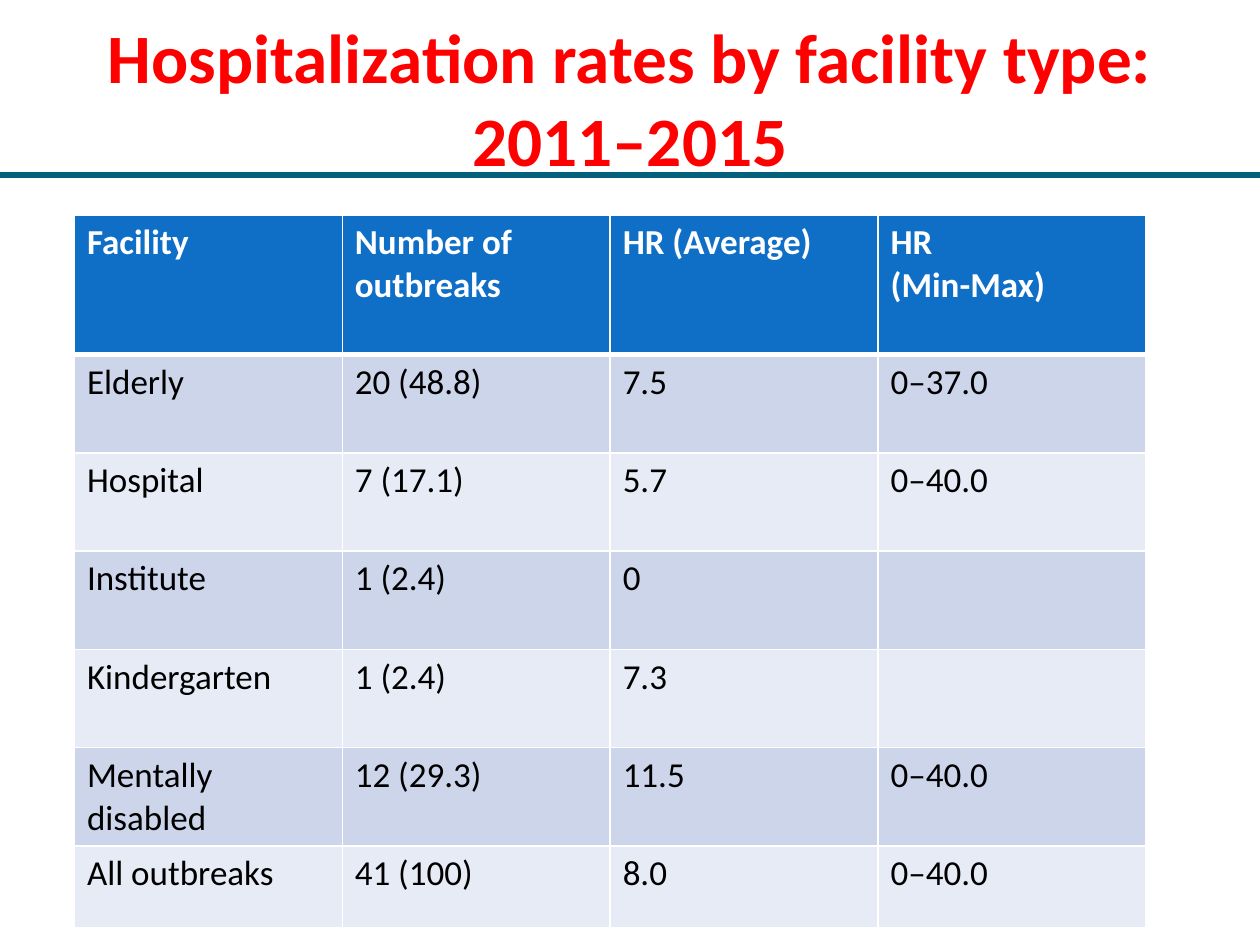
from lxml.etree import SubElement
from pptx import Presentation
from pptx.dml.color import RGBColor
from pptx.enum.shapes import MSO_CONNECTOR as Connector
from pptx.enum.text import MSO_ANCHOR as Anchor, PP_ALIGN as Align
from pptx.oxml.ns import qn
from pptx.util import Cm, Pt

RED = RGBColor(0xFF, 0x00, 0x00)
TEAL = RGBColor(0x04, 0x61, 0x7B)
BLUE = RGBColor(0x0F, 0x6F, 0xC6)
BAND_DARK = RGBColor(0xCC, 0xD5, 0xEA)
BAND_LIGHT = RGBColor(0xE7, 0xEB, 0xF5)
WHITE = RGBColor(0xFF, 0xFF, 0xFF)
BLACK = RGBColor(0x00, 0x00, 0x00)


def write_text(frame, text, size=20, color=BLACK, bold=False, align=Align.LEFT):
    """Fill a text frame, one paragraph per line of text."""
    frame.word_wrap = True
    for index, line in enumerate(text.split("\n")):
        para = frame.add_paragraph() if index else frame.paragraphs[0]
        para.alignment = align
        para.font.size = Pt(size)
        span = para.add_run()
        span.text = line
        span.font.name = "Calibri"
        span.font.size = Pt(size)
        span.font.bold = bold
        span.font.color.rgb = color


def set_borders(cell, **widths):
    """Draw white cell borders; widths in points, keyed by side."""
    properties = cell._tc.get_or_add_tcPr()
    for side in ("L", "R", "T", "B"):
        border = SubElement(properties, qn(f"a:ln{side}"), w=str(Pt(widths.get(side, 1))))
        fill = SubElement(border, qn("a:solidFill"))
        SubElement(fill, qn("a:srgbClr"), val=str(WHITE))


deck = Presentation()
deck.slide_width, deck.slide_height = Cm(25.4), Cm(19.05)
page = deck.slides.add_slide(deck.slide_layouts[6])

# Title
box = page.shapes.add_textbox(Cm(1.27), Cm(0), Cm(22.86), Cm(3.94))
box.text_frame.vertical_anchor = Anchor.MIDDLE
write_text(box.text_frame, "Hospitalization rates by facility type: 2011–2015",
           size=39.6, color=RED, bold=True, align=Align.CENTER)

# Rule under the title
rule = page.shapes.add_connector(Connector.STRAIGHT, Cm(0), Cm(3.53), deck.slide_width, Cm(3.53))
rule.line.color.rgb = TEAL
rule.line.width = Pt(3)
SubElement(rule._element.spPr, qn("a:effectLst"))

# Table of rates
rates = [
    ("Facility", "Number of outbreaks", "HR (Average)", "HR\n(Min-Max)"),
    ("Elderly", "20 (48.8)", "7.5", "0–37.0"),
    ("Hospital", "7 (17.1)", "5.7", "0–40.0"),
    ("Institute", "1 (2.4)", "0", ""),
    ("Kindergarten", "1 (2.4)", "7.3", ""),
    ("Mentally disabled", "12 (29.3)", "11.5", "0–40.0"),
    ("All outbreaks", "41 (100)", "8.0", "0–40.0"),
]
row_heights = [2.82] + [1.98] * 5 + [1.65]
table = page.shapes.add_table(len(rates), len(rates[0]), Cm(1.5), Cm(4.33),
                              Cm(21.6), Cm(sum(row_heights))).table
for column in table.columns:
    column.width = Cm(5.4)

for row_index, (values, height) in enumerate(zip(rates, row_heights)):
    table.rows[row_index].height = Cm(height)
    header = row_index == 0
    band = BLUE if header else BAND_DARK if row_index % 2 else BAND_LIGHT
    for column_index, value in enumerate(values):
        cell = table.cell(row_index, column_index)
        set_borders(cell, T=3 if row_index == 1 else 1, B=3 if header else 1)
        cell.fill.solid()
        cell.fill.fore_color.rgb = band
        if value:
            write_text(cell.text_frame, value, color=WHITE if header else BLACK, bold=header)

deck.save("out.pptx")
